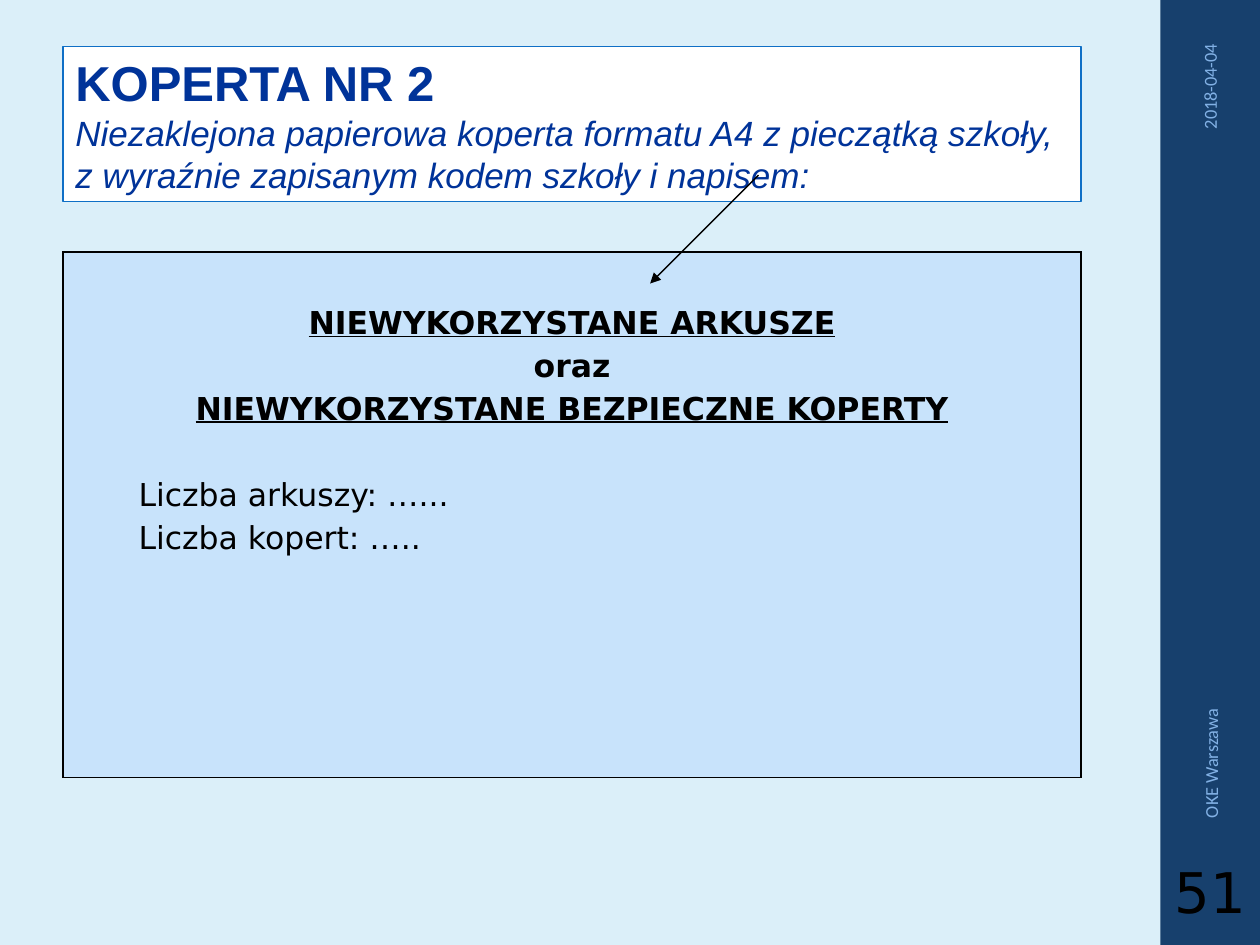
from lxml import etree
from pptx import Presentation
from pptx import util as u
from pptx.dml.color import RGBColor
from pptx.enum import shapes, text
from pptx.oxml import ns

Pt = u.Pt
BLACK = RGBColor(0x00, 0x00, 0x00)
WHITE = RGBColor(0xFF, 0xFF, 0xFF)
BACKGROUND = RGBColor(0xDB, 0xEF, 0xF9)
NAVY = RGBColor(0x17, 0x40, 0x6D)
FOOTER_BLUE = RGBColor(0x82, 0xB1, 0xE5)
BORDER_BLUE = RGBColor(0x0F, 0x6F, 0xC6)
TITLE_BLUE = RGBColor(0x00, 0x33, 0x99)
LABEL_BLUE = RGBColor(0xC8, 0xE3, 0xFB)
LEFT, WIDTH = 36, 581.76
LABEL_FONT = "DejaVu Sans"


def box(left, top, width, height):
    return [Pt(value) for value in (left, top, width, height)]


def write(frame, content, font, size, color, first=False, bold=False, italic=False,
          underline=False, align=text.PP_ALIGN.LEFT, before=0, indent=0):
    paragraph = frame.paragraphs[0] if first else frame.add_paragraph()
    paragraph.text = content
    paragraph.alignment = align
    paragraph.space_before = Pt(before)
    if indent:
        properties = paragraph._p.get_or_add_pPr()
        properties.set("marL", str(Pt(indent)))
        properties.set("indent", "0")
    for run in paragraph.runs:
        run.font.name = font
        run.font.size = Pt(size)
        run.font.color.rgb = color
        run.font.bold = bold
        run.font.italic = italic
        run.font.underline = underline


def add_rectangle(slide, bounds, fill, line=None):
    shape = slide.shapes.add_shape(shapes.MSO_SHAPE.RECTANGLE, *box(*bounds))
    shape.shadow.inherit = False
    shape.fill.solid()
    shape.fill.fore_color.rgb = fill
    if line is None:
        shape.line.fill.background()
    else:
        shape.line.color.rgb = line
        shape.line.width = Pt(0.75)
    return shape


def add_label(slide, bounds, content, rotation=0, side_margin=7.2, **style):
    shape = slide.shapes.add_textbox(*box(*bounds))
    shape.rotation = rotation
    frame = shape.text_frame
    frame.word_wrap = True
    frame.vertical_anchor = text.MSO_ANCHOR.MIDDLE
    frame.margin_left = frame.margin_right = Pt(side_margin)
    write(frame, content, first=True, **style)


def add_title(slide):
    shape = add_rectangle(slide, (LEFT, 26.64, WIDTH, 88.56), WHITE, BORDER_BLUE)
    frame = shape.text_frame
    frame.word_wrap = True
    frame.vertical_anchor = text.MSO_ANCHOR.TOP
    write(frame, "KOPERTA NR 2", "Arial", 28, TITLE_BLUE, first=True, bold=True)
    write(frame, "Niezaklejona papierowa koperta formatu A4 z pieczątką szkoły,\v"
          "z wyraźnie zapisanym kodem szkoły i napisem:", "Arial", 20, TITLE_BLUE, italic=True)


def add_borders(cell, color, width):
    properties = cell._tc.get_or_add_tcPr()
    for position, side in enumerate(("lnL", "lnR", "lnT", "lnB")):
        line = etree.Element(ns.qn("a:" + side), w=str(Pt(width)))
        fill = etree.SubElement(line, ns.qn("a:solidFill"))
        etree.SubElement(fill, ns.qn("a:srgbClr"), val=str(color))
        properties.insert(position, line)


def add_envelope_label(slide):
    table = slide.shapes.add_table(1, 1, *box(LEFT, 144, WIDTH, 300.24)).table
    table.first_row = table.horz_banding = False
    cell = table.cell(0, 0)
    cell.fill.solid()
    cell.fill.fore_color.rgb = LABEL_BLUE
    cell.margin_top = Pt(30.7)
    add_borders(cell, BLACK, 1)
    heading = {"bold": True, "align": text.PP_ALIGN.CENTER}
    lines = [
        ("NIEWYKORZYSTANE ARKUSZE", {**heading, "underline": True, "first": True}),
        ("oraz", {**heading, "before": 3.6}),
        ("NIEWYKORZYSTANE BEZPIECZNE KOPERTY", {**heading, "underline": True, "before": 3.6}),
        ("Liczba arkuszy: …...", {"indent": 36, "before": 28.1}),
        ("Liczba kopert: …..", {"indent": 36, "before": 3.6}),
    ]
    for content, style in lines:
        write(cell.text_frame, content, LABEL_FONT, 18, BLACK, **style)


def add_arrow(slide, start, end):
    arrow = slide.shapes.add_connector(
        shapes.MSO_CONNECTOR.STRAIGHT, *[Pt(value) for value in (*start, *end)])
    arrow.line.color.rgb = BLACK
    arrow.line.width = Pt(0.75)
    etree.SubElement(arrow.line._get_or_add_ln(), ns.qn("a:tailEnd"), type="triangle")
    etree.SubElement(arrow._element.spPr, ns.qn("a:effectLst"))


def add_sidebar(slide):
    add_rectangle(slide, (663.12, 0, 56.88, 540), NAVY)
    footer = {"rotation": 270, "font": "Calibri", "size": 10.5, "color": FOOTER_BLUE}
    add_label(slide, (616.32, 82.08, 149.76, 21.6), "2018-04-04",
              align=text.PP_ALIGN.RIGHT, **footer)
    add_label(slide, (550.8, 322.56, 282.24, 21.6), "OKE Warszawa", **footer)
    add_label(slide, (664.56, 486, 54, 46.8), "51", side_margin=2.16, font=LABEL_FONT,
              size=32, color=BLACK, align=text.PP_ALIGN.CENTER)


def main():
    presentation = Presentation()
    presentation.slide_width, presentation.slide_height = Pt(720), Pt(540)
    slide = presentation.slides.add_slide(presentation.slide_layouts[6])
    slide.background.fill.solid()
    slide.background.fill.fore_color.rgb = BACKGROUND
    add_sidebar(slide)
    add_envelope_label(slide)
    add_title(slide)
    add_arrow(slide, (433.44, 100.08), (371.52, 162))
    presentation.save("out.pptx")


if __name__ == "__main__":
    main()
